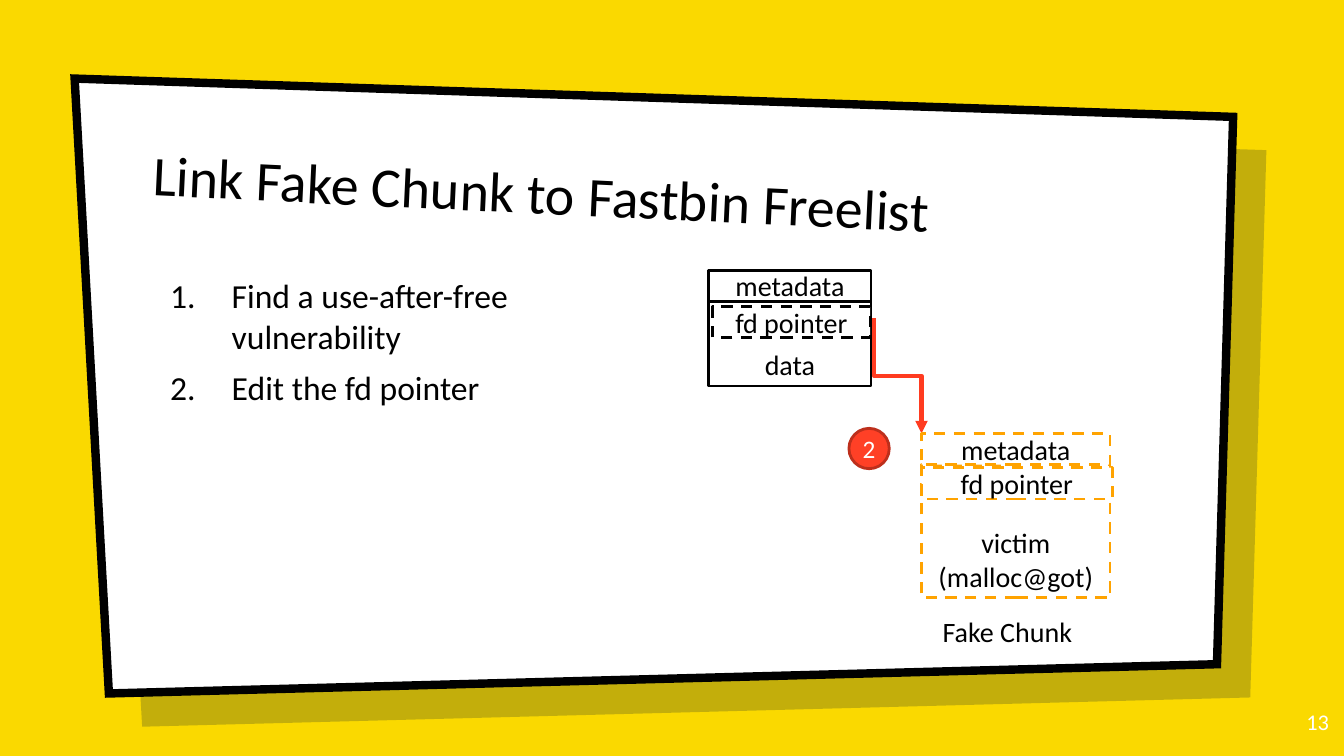
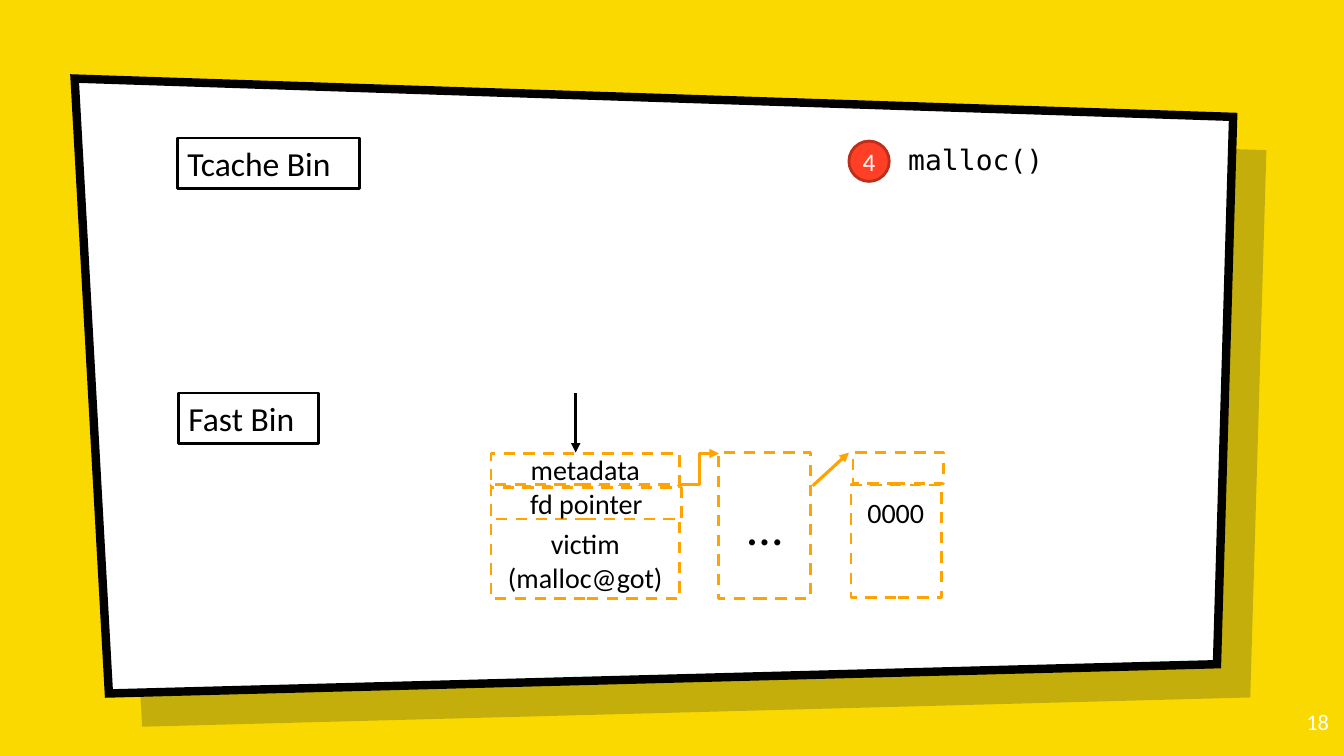
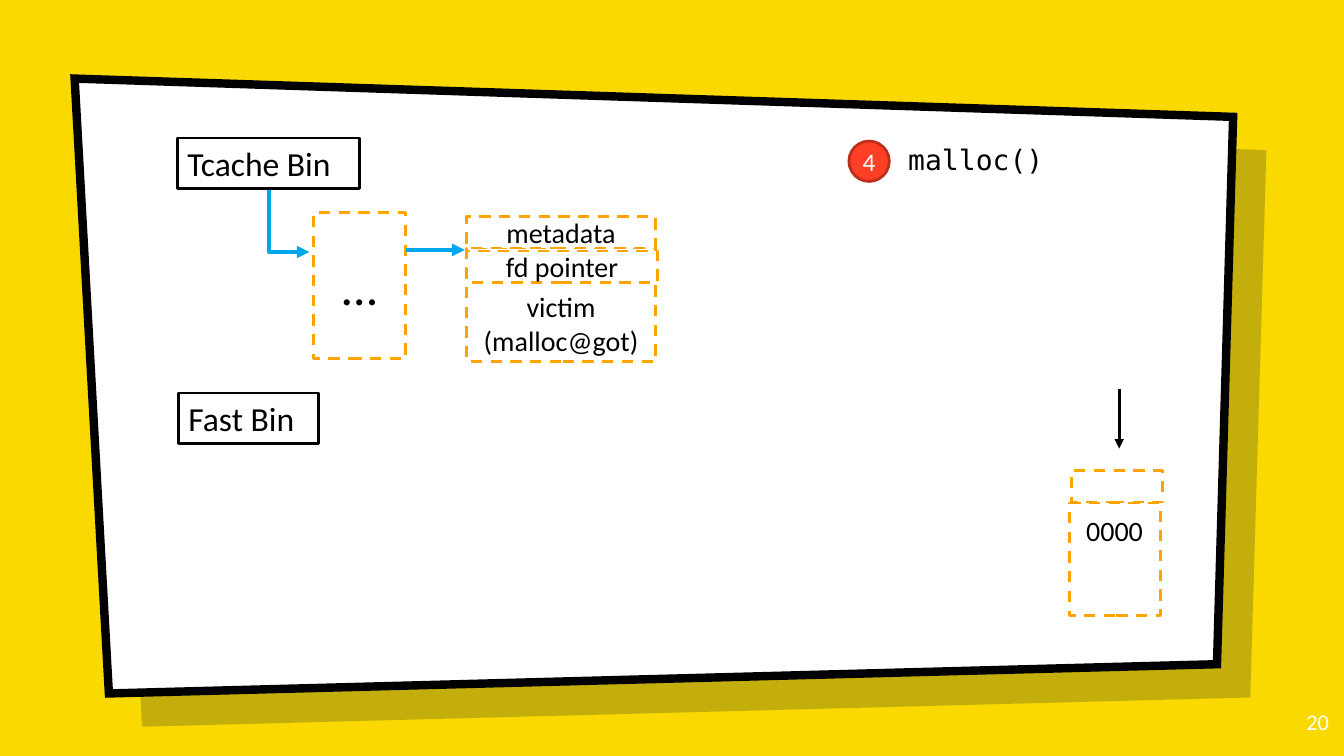
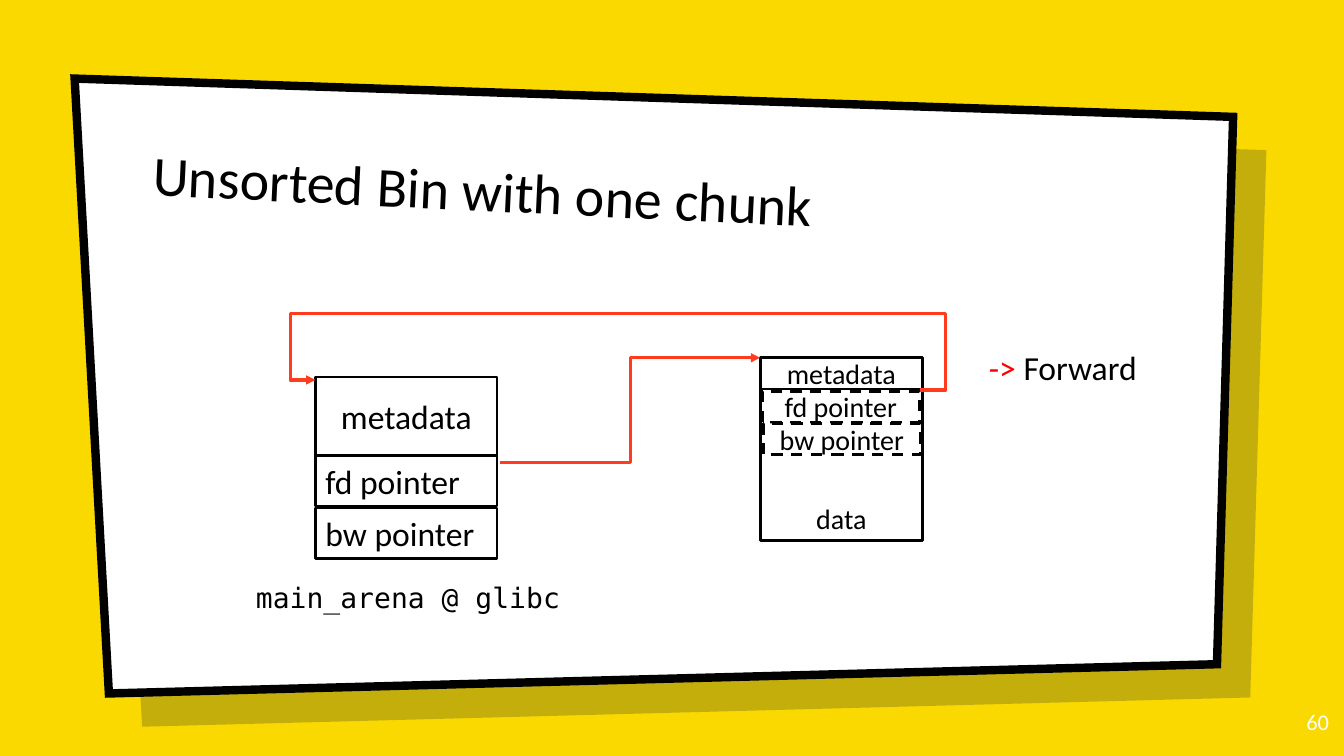
from dataclasses import dataclass

from lxml.etree import SubElement
from pptx import Presentation
from pptx.dml.color import RGBColor
from pptx.enum.dml import MSO_LINE
from pptx.enum.shapes import MSO_CONNECTOR, MSO_SHAPE
from pptx.enum.text import MSO_ANCHOR, MSO_AUTO_SIZE, PP_ALIGN
from pptx.oxml.ns import qn
from pptx.util import Inches, Pt

COLORS = {
    "yellow": "FAD900",
    "shade": "001936",
    "white": "FFFFFF",
    "black": "000000",
    "orange": "FFA300",
    "blue": "00A7EB",
    "arrow_red": "FF3B20",
    "badge_red": "FF4026",
    "badge_edge": "BD2F1C",
    "text_red": "FF0000",
}
SANS = "Calibri"
MONO = "DejaVu Sans Mono"
ROW_HEIGHT = 0.31
FRAME = ((0.74, 0.78), (12.23, 1.16), (12.07, 6.59), (1.08, 6.88))
SHADE_OFFSET = 0.33


@dataclass(frozen=True)
class Pointer:
    """A dashed row, placed relative to its chunk's top left corner."""
    text: str
    x: float
    y: float
    width: float


@dataclass(frozen=True)
class Chunk:
    left: float
    top: float
    width: float
    body_height: float
    text: str
    pointers: tuple
    color: str = "black"
    dashed: bool = False


def rgb(name):
    return RGBColor.from_string(COLORS[name])


def set_font(font, size=20, color="black", name=SANS):
    font.name = name
    font.size = Pt(size)
    font.color.rgb = rgb(color)


def write_text(shape, text, size=20, color="black", font=SANS, align=PP_ALIGN.LEFT,
               anchor=MSO_ANCHOR.TOP, wrap=True, grow=False, inset=None):
    """Fill a shape with text, one paragraph for each line."""
    frame = shape.text_frame
    frame.word_wrap = wrap
    frame.auto_size = MSO_AUTO_SIZE.SHAPE_TO_FIT_TEXT if grow else MSO_AUTO_SIZE.NONE
    frame.vertical_anchor = anchor
    if inset is not None:
        frame.margin_left = frame.margin_right = Inches(inset)
        frame.margin_top = frame.margin_bottom = Inches(inset)
    for index, line in enumerate(text.split("\n")):
        paragraph = frame.paragraphs[0] if index == 0 else frame.add_paragraph()
        paragraph.alignment = align
        run = paragraph.add_run()
        run.text = line
        set_font(run.font, size, color, font)


def add_text(slide, left, top, width, height, text, **text_format):
    shape = slide.shapes.add_textbox(Inches(left), Inches(top), Inches(width), Inches(height))
    write_text(shape, text, **text_format)
    return shape


def add_box(slide, left, top, width, height, text="", fill="white", line="black",
            dashed=False, kind=MSO_SHAPE.RECTANGLE, align=PP_ALIGN.CENTER,
            anchor=MSO_ANCHOR.MIDDLE, **text_format):
    shape = slide.shapes.add_shape(
        kind, Inches(left), Inches(top), Inches(width), Inches(height))
    shape.shadow.inherit = False
    shape.fill.solid()
    shape.fill.fore_color.rgb = rgb(fill)
    if line is None:
        shape.line.fill.background()
    else:
        shape.line.color.rgb = rgb(line)
        shape.line.width = Pt(2)
        if dashed:
            shape.line.dash_style = MSO_LINE.DASH
    if text:
        write_text(shape, text, align=align, anchor=anchor, **text_format)
    return shape


def add_arrow(slide, start, end, color, width=2.25, kind=MSO_CONNECTOR.STRAIGHT,
              preset=None, adjustments=(), vertical_first=False):
    """Draw an arrow; vertical_first makes an elbow leave its start downwards."""
    (x1, y1), (x2, y2) = start, end
    if vertical_first:
        middle_x, middle_y = (x1 + x2) / 2, (y1 + y2) / 2
        half_width, half_height = (y2 - y1) / 2, (x2 - x1) / 2
        x1, x2 = middle_x + half_width, middle_x - half_width
        y1, y2 = middle_y - half_height, middle_y + half_height
    connector = slide.shapes.add_connector(kind, Inches(x1), Inches(y1), Inches(x2), Inches(y2))
    connector.line.color.rgb = rgb(color)
    connector.line.width = Pt(width)
    properties = connector.element.spPr
    if vertical_first:
        properties.find(qn("a:xfrm")).set("rot", str(270 * 60000))
    geometry = properties.find(qn("a:prstGeom"))
    if preset:
        geometry.set("prst", preset)
    for number, value in enumerate(adjustments, 1):
        SubElement(geometry.find(qn("a:avLst")), qn("a:gd"),
                   name=f"adj{number}", fmla=f"val {round(value * 100000)}")
    SubElement(properties.find(qn("a:ln")), qn("a:tailEnd"), type="triangle")
    SubElement(properties, qn("a:effectLst"))


def add_elbow(slide, start, end, color, **options):
    add_arrow(slide, start, end, color, kind=MSO_CONNECTOR.ELBOW, **options)


def add_panel(slide, offset, fill):
    points = [(Inches(x + offset), Inches(y + offset)) for x, y in FRAME]
    builder = slide.shapes.build_freeform(*points[0], scale=1.0)
    builder.add_line_segments(points[1:], close=True)
    panel = builder.convert_to_shape()
    panel.shadow.inherit = False
    panel.fill.solid()
    panel.fill.fore_color.rgb = rgb(fill)
    return panel


def build_backdrop(layout, slide):
    """Put the yellow ground and the tilted panel on the layout."""
    layout.background.fill.solid()
    layout.background.fill.fore_color.rgb = rgb("yellow")
    shade = add_panel(slide, SHADE_OFFSET, "shade")
    shade.line.fill.background()
    color = shade.element.spPr.find(qn("a:solidFill")).find(qn("a:srgbClr"))
    SubElement(color, qn("a:alpha"), val="22000")
    panel = add_panel(slide, 0, "white")
    panel.line.color.rgb = rgb("black")
    panel.line.width = Pt(6)
    SubElement(panel.element.spPr.find(qn("a:ln")), qn("a:miter"), lim="800000")
    for shape in (shade, panel):
        layout.shapes.element.append(shape.element)


def add_title(slide, text):
    title = add_text(slide, 1.42, 1.28, 10.25, 1.11, text, size=40,
                     anchor=MSO_ANCHOR.BOTTOM, inset=0.1)
    title.rotation = 2.7


def add_slide_number(slide, number):
    add_text(slide, 12.48, 6.93, 0.8, 0.57, str(number), size=16, color="white",
             align=PP_ALIGN.RIGHT, inset=0.1)


def add_chunk(slide, chunk):
    style = {"line": chunk.color, "dashed": chunk.dashed}
    add_box(slide, chunk.left, chunk.top + ROW_HEIGHT, chunk.width, chunk.body_height,
            chunk.text, anchor=MSO_ANCHOR.BOTTOM, **style)
    add_box(slide, chunk.left, chunk.top, chunk.width, ROW_HEIGHT, "metadata", **style)
    for pointer in chunk.pointers:
        add_box(slide, chunk.left + pointer.x, chunk.top + pointer.y, pointer.width,
                ROW_HEIGHT, pointer.text, line=chunk.color, dashed=True)


def add_victim_chunk(slide, left, top, body_height=1.13):
    add_chunk(slide, Chunk(left, top, 1.87, body_height, "victim\n(malloc@got)",
                           (Pointer("fd pointer", 0, 0.34, 1.89),), "orange", True))


def add_last_chunk(slide, left, top):
    style = {"line": "orange", "dashed": True}
    add_box(slide, left, top + 0.32, 0.9, 1.12, **style)
    add_box(slide, left + 0.02, top, 0.9, ROW_HEIGHT, **style)
    add_text(slide, left - 0.01, top + 0.33, 0.91, 0.53, "0000",
             align=PP_ALIGN.CENTER, anchor=MSO_ANCHOR.MIDDLE)


def add_more_chunks(slide, left, top):
    add_box(slide, left, top, 0.91, 1.45, "…", line="orange", dashed=True, size=36)


def add_badge(slide, top, number):
    add_box(slide, 8.42, top, 0.4, 0.4, str(number), fill="badge_red", line="badge_edge",
            kind=MSO_SHAPE.OVAL, size=18, color="white", wrap=False)


def add_label_box(slide, left, top, width, text, wrap=False):
    add_box(slide, left, top, width, 0.5, text, size=24, align=PP_ALIGN.LEFT,
            anchor=MSO_ANCHOR.TOP, wrap=wrap, grow=True)


def add_bins(slide):
    """Draw what both malloc() slides show."""
    add_label_box(slide, 1.76, 1.37, 1.81, "Tcache Bin")
    add_label_box(slide, 1.77, 3.9, 1.39, "Fast Bin")
    add_badge(slide, 1.4, 4)
    add_box(slide, 8.91, 1.32, 2.3, 0.53, "malloc()", line=None, font=MONO,
            align=PP_ALIGN.LEFT)


def build_link_slide(slide):
    add_title(slide, "Link Fake Chunk to Fastbin Freelist")
    steps = add_text(slide, 1.53, 2.63, 5.26, 3.83,
                     "Find a use-after-free vulnerability\nEdit the fd pointer",
                     size=24, inset=0.1)
    for index, paragraph in enumerate(steps.text_frame.paragraphs):
        if index:
            paragraph.space_before = Pt(8)
        properties = paragraph._p.get_or_add_pPr()
        properties.set("marL", str(Inches(0.67)))
        properties.set("indent", str(Inches(-0.61)))
        SubElement(properties, qn("a:buFont"), typeface="+mj-lt")
        SubElement(properties, qn("a:buAutoNum"), type="arabicPeriod")
    add_elbow(slide, (8.67, 3.16), (9.14, 4.3), "arrow_red", width=3,
              adjustments=(0.5,), vertical_first=True)
    add_badge(slide, 4.25, 2)
    add_victim_chunk(slide, 9.14, 4.3, 1.32)
    add_text(slide, 9.25, 6.05, 1.65, 0.44, "Fake Chunk", wrap=False, grow=True)
    add_chunk(slide, Chunk(7.03, 2.68, 1.61, 0.84, "data",
                           (Pointer("fd pointer", 0.04, 0.36, 1.56),)))


def build_fast_bin_slide(slide):
    add_bins(slide)
    add_victim_chunk(slide, 4.87, 4.5)
    add_arrow(slide, (8.06, 4.82), (8.42, 4.49), "orange")
    add_elbow(slide, (6.75, 4.81), (7.13, 4.5), "orange")
    add_more_chunks(slide, 7.13, 4.49)
    add_arrow(slide, (5.71, 3.9), (5.71, 4.49), "black")
    add_last_chunk(slide, 8.44, 4.49)


def build_tcache_slide(slide):
    add_elbow(slide, (2.67, 1.88), (3.07, 2.5), "blue", width=3,
              preset="bentConnector2", vertical_first=True)
    add_bins(slide)
    add_more_chunks(slide, 3.11, 2.11)
    add_victim_chunk(slide, 4.63, 2.15)
    add_arrow(slide, (11.1, 3.86), (11.1, 4.45), "black")
    add_arrow(slide, (4.03, 2.48), (4.61, 2.48), "blue", width=3)
    add_last_chunk(slide, 10.61, 4.67)


def build_unsorted_slide(slide):
    add_title(slide, "Unsorted Bin with one chunk")
    add_chunk(slide, Chunk(7.54, 3.55, 1.61, 1.5, "data",
                           (Pointer("fd pointer", 0.02, 0.33, 1.56),
                            Pointer("bw pointer", 0.03, 0.65, 1.56))))
    add_label_box(slide, 3.13, 4.52, 1.8, "fd pointer", wrap=True)
    add_label_box(slide, 3.13, 5.04, 1.8, "bw pointer")
    add_box(slide, 3.13, 3.74, 1.8, 0.78, "metadata", size=24)
    add_text(slide, 2.44, 5.71, 3.23, 0.44, "main_arena @ glibc", font=MONO,
             wrap=False, grow=True)
    add_elbow(slide, (4.96, 4.59), (7.54, 3.55), "arrow_red")
    add_elbow(slide, (9.13, 3.87), (3.13, 3.77), "arrow_red", preset="bentConnector5",
              adjustments=(-0.042, 7.556, 1.042))
    legend = add_text(slide, 9.65, 3.34, 2.83, 1.5, "->", size=24, color="text_red", inset=0.1)
    paragraph = legend.text_frame.paragraphs[0]
    paragraph._p.get_or_add_pPr().set("marL", str(Inches(0.06)))
    run = paragraph.add_run()
    run.text = " Forward"
    set_font(run.font, size=24)


def main():
    presentation = Presentation()
    presentation.slide_width = Inches(13.33)
    presentation.slide_height = Inches(7.5)
    layout = presentation.slide_layouts[6]
    pages = (
        (13, build_link_slide),
        (18, build_fast_bin_slide),
        (20, build_tcache_slide),
        (60, build_unsorted_slide),
    )
    for index, (number, build_content) in enumerate(pages):
        slide = presentation.slides.add_slide(layout)
        if index == 0:
            build_backdrop(layout, slide)
        add_slide_number(slide, number)
        build_content(slide)
    presentation.save("out.pptx")


if __name__ == "__main__":
    main()
